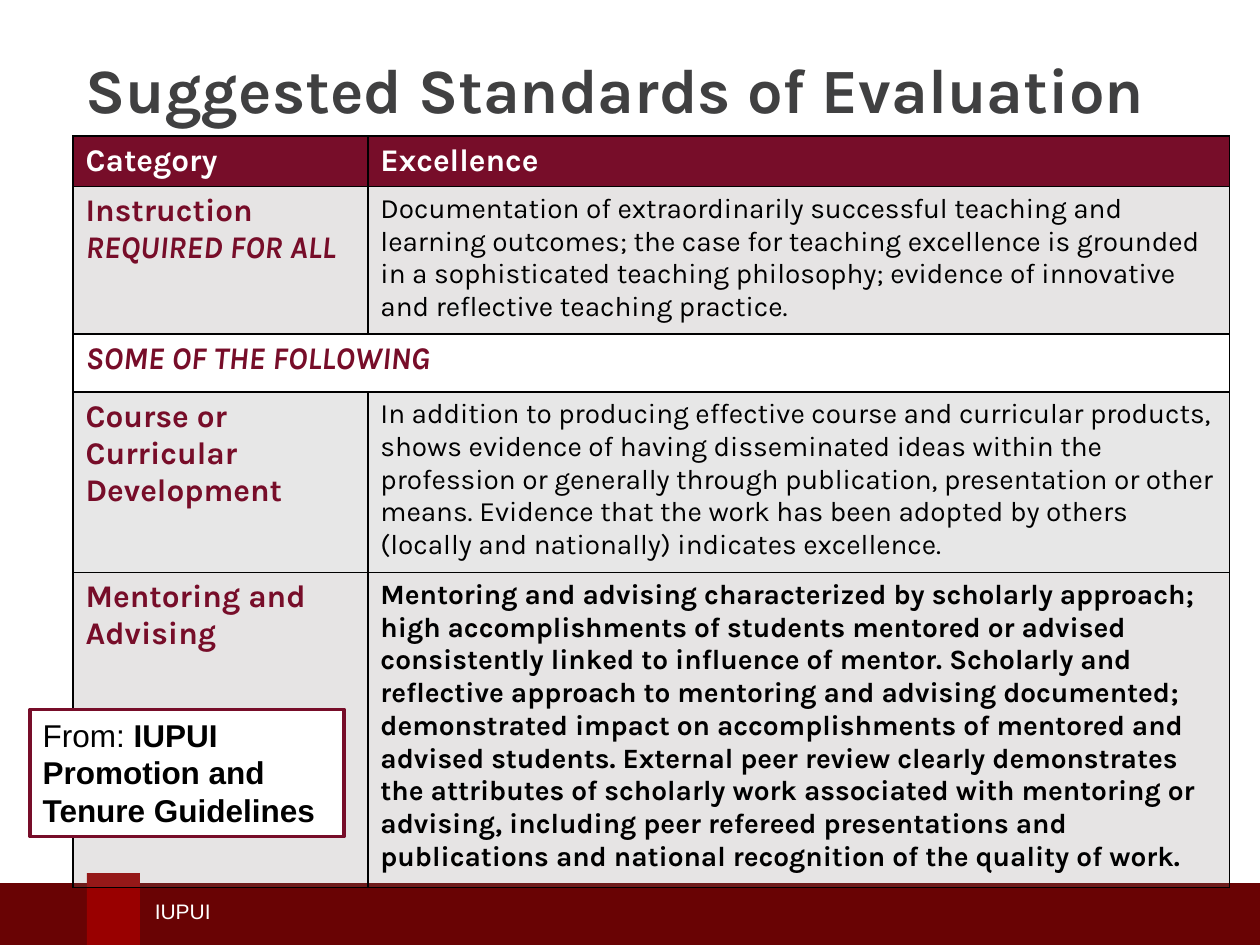
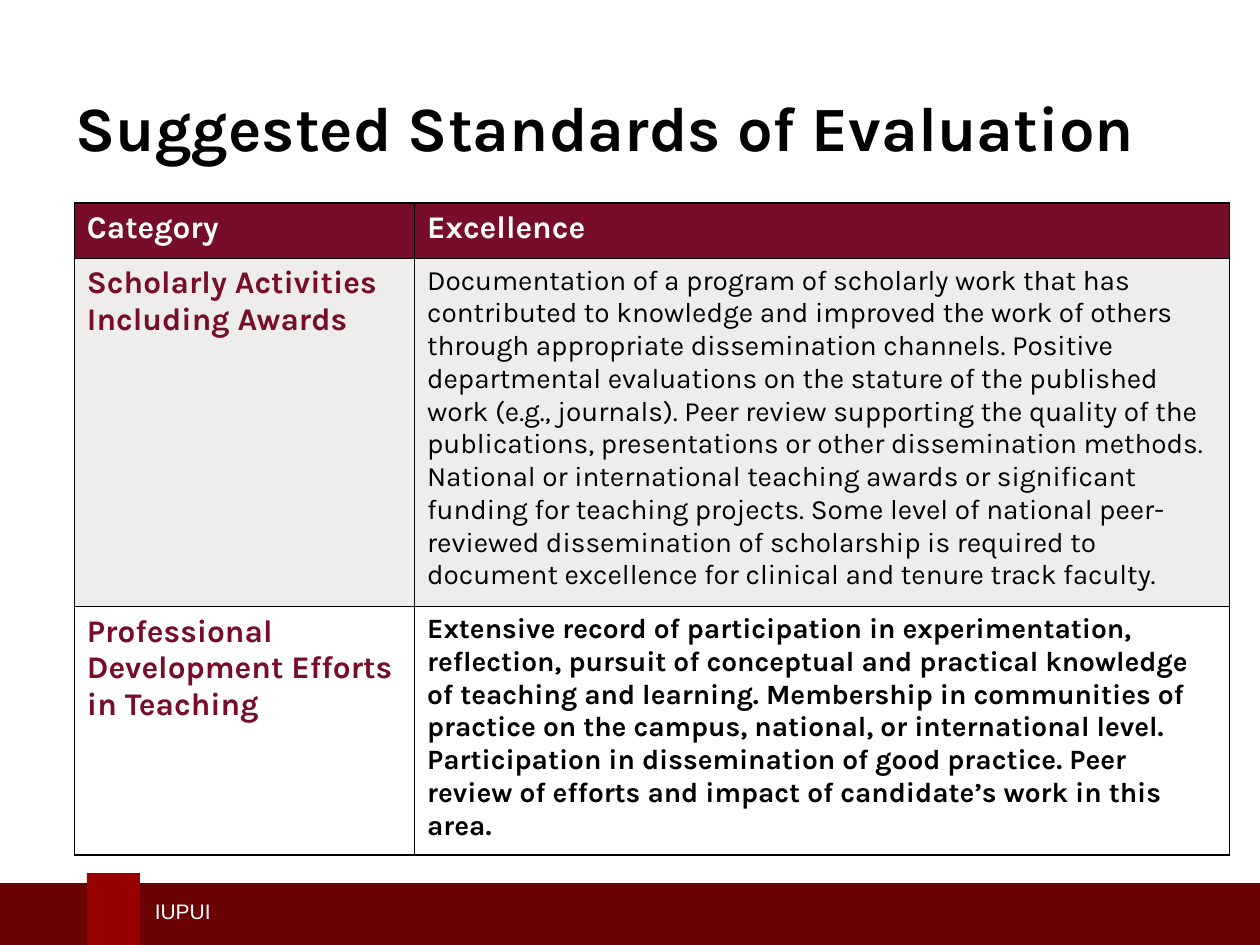
from pptx import Presentation
from pptx.dml.color import RGBColor
from pptx.enum.shapes import MSO_SHAPE
from pptx.enum.text import MSO_ANCHOR, MSO_AUTO_SIZE, PP_ALIGN
from pptx.oxml import parse_xml
from pptx.oxml.ns import nsdecls
from pptx.util import Inches, Pt

WHITE = RGBColor(0xFF, 0xFF, 0xFF)
BLACK = RGBColor(0x00, 0x00, 0x00)
CHARCOAL = RGBColor(0x40, 0x40, 0x41)
CRIMSON = RGBColor(0x77, 0x0D, 0x29)
BAND_RED = RGBColor(0x69, 0x03, 0x04)
TAB_RED = RGBColor(0x99, 0x00, 0x00)
LIGHT_GRAY = RGBColor(0xE7, 0xE7, 0xE7)
# These two tints are laid on at TINT_ALPHA
WARM_GRAY = RGBColor(0x86, 0x7C, 0x78)
PALE_GRAY = RGBColor(0xAD, 0xA7, 0xA4)
TINTS = (WARM_GRAY, PALE_GRAY)
TINT_ALPHA = 20000

HEADING_FONT = "Karla"
PLAIN_FONT = "Arial"
HEADER = ("Category", "Excellence")

# Each row: height, fill, category lines, excellence text, bold text
SLIDES = [
    dict(
        title_box=(0.58, 0.35, 9.18, 0.63), title_color=CHARCOAL,
        table_at=(0.58, 1.08), columns=(2.34, 6.84), header_height=0.4,
        rows=[
            (1.17, WARM_GRAY, ["Instruction", "REQUIRED FOR ALL"],
             "Documentation of extraordinarily successful teaching and learning "
             "outcomes; the case for teaching excellence is grounded in a "
             "sophisticated teaching philosophy; evidence of innovative and "
             "reflective teaching practice.", False),
            (0.46, WHITE, ["SOME OF THE FOLLOWING"], None, False),
            (1.43, LIGHT_GRAY, ["Course or Curricular", "Development"],
             "In addition to producing effective course and curricular products, "
             "shows evidence of having disseminated ideas within the profession "
             "or generally through publication, presentation or other means. "
             "Evidence that the work has been adopted by others (locally and "
             "nationally) indicates excellence.", False),
            (2.5, WARM_GRAY, ["Mentoring and Advising"],
             "Mentoring and advising characterized by scholarly approach; high "
             "accomplishments of students mentored or advised consistently "
             "linked to influence of mentor. Scholarly and reflective approach "
             "to mentoring and advising documented; demonstrated impact on "
             "accomplishments of mentored and advised students. External peer "
             "review clearly demonstrates the attributes of scholarly work "
             "associated with mentoring or advising, including peer refereed "
             "presentations and publications and national recognition of the "
             "quality of work.", True),
        ],
    ),
    dict(
        title_box=(0.5, 0.65, 10.13, 0.7), title_color=BLACK,
        table_at=(0.59, 1.61), columns=(2.7, 6.47), header_height=0.44,
        rows=[
            (2.76, PALE_GRAY, ["Scholarly Activities", "Including Awards"],
             "Documentation of a program of scholarly work that has contributed "
             "to knowledge and improved the work of others through appropriate "
             "dissemination channels. Positive departmental evaluations on the "
             "stature of the published work (e.g., journals). Peer review "
             "supporting the quality of the publications, presentations or "
             "other dissemination methods. National or international teaching "
             "awards or significant funding for teaching projects. Some level "
             "of national peer-reviewed dissemination of scholarship is "
             "required to document excellence for clinical and tenure track "
             "faculty.", False),
            (1.97, WHITE, ["Professional Development Efforts in Teaching"],
             "Extensive record of participation in experimentation, reflection, "
             "pursuit of conceptual and practical knowledge of teaching and "
             "learning. Membership in communities of practice on the campus, "
             "national, or international level. Participation in dissemination "
             "of good practice. Peer review of efforts and impact of "
             "candidate’s work in this area.", True),
        ],
    ),
]


def write(paragraph, text, size=18, color=BLACK, font=HEADING_FONT,
          bold=False, italic=False):
    paragraph.alignment = PP_ALIGN.LEFT
    run = paragraph.add_run()
    run.text = text
    run.font.name = font
    run.font.size = Pt(size)
    run.font.color.rgb = color
    run.font.bold = bold
    run.font.italic = italic


def paint_cell(cell, color):
    """Give a cell thin black borders and a solid or tinted fill."""
    properties = cell._tc.get_or_add_tcPr()
    for side in "LRTB":
        properties.append(parse_xml(
            f'<a:ln{side} w="{Pt(1)}" {nsdecls("a")}><a:solidFill>'
            f'<a:srgbClr val="{BLACK}"/></a:solidFill></a:ln{side}>'))
    cell.fill.solid()
    cell.fill.fore_color.rgb = color
    if color in TINTS:
        properties.find("{*}solidFill/{*}srgbClr").append(
            parse_xml(f'<a:alpha val="{TINT_ALPHA}" {nsdecls("a")}/>'))


prs = Presentation()
prs.slide_width, prs.slide_height = Inches(10), Inches(7.5)

for content in SLIDES:
    slide = prs.slides.add_slide(prs.slide_layouts[5])

    # Footer band with its tab and label
    for box, color in (((-0.03, 7.01, 10.09, 0.5), BAND_RED),
                       ((0.69, 6.93, 0.42, 0.58), TAB_RED)):
        band = slide.shapes.add_shape(MSO_SHAPE.RECTANGLE, *map(Inches, box))
        band.shadow.inherit = False
        band.fill.solid()
        band.fill.fore_color.rgb = color
        band.line.fill.background()
    footer = slide.shapes.add_textbox(
        *map(Inches, (1.13, 7.08, 3.95, 0.3))).text_frame
    footer.word_wrap = True
    footer.vertical_anchor = MSO_ANCHOR.MIDDLE
    write(footer.paragraphs[0], "IUPUI", size=12, color=WHITE, font=PLAIN_FONT)

    # Title
    title = slide.shapes.title
    title.left, title.top, title.width, title.height = map(
        Inches, content["title_box"])
    title.text_frame.vertical_anchor = MSO_ANCHOR.TOP
    title.text_frame.auto_size = MSO_AUTO_SIZE.NONE
    write(title.text_frame.paragraphs[0], "Suggested Standards of Evaluation",
          size=36, color=content["title_color"], bold=True)

    # Standards table
    rows, columns = content["rows"], content["columns"]
    heights = [content["header_height"]] + [row[0] for row in rows]
    left, top = content["table_at"]
    standards = slide.shapes.add_table(
        len(heights), len(columns), Inches(left), Inches(top),
        Inches(sum(columns)), Inches(sum(heights))).table
    standards.first_row = standards.horz_banding = False
    for column, width in zip(standards.columns, columns):
        column.width = Inches(width)
    for row, height in zip(standards.rows, heights):
        row.height = Inches(height)

    for column, heading in enumerate(HEADER):
        cell = standards.cell(0, column)
        paint_cell(cell, CRIMSON)
        write(cell.text_frame.paragraphs[0], heading, color=WHITE, bold=True)

    for number, (_, fill, category, excellence, bold) in enumerate(rows, 1):
        category_cell, excellence_cell = standards.rows[number].cells
        paint_cell(category_cell, fill)
        paint_cell(excellence_cell, fill)
        for index, line in enumerate(category):
            frame = category_cell.text_frame
            paragraph = frame.add_paragraph() if index else frame.paragraphs[0]
            write(paragraph, line, color=CRIMSON, bold=True,
                  italic=line.isupper())
        if excellence:
            write(excellence_cell.text_frame.paragraphs[0], excellence,
                  size=16, bold=bold)
        else:
            category_cell.merge(excellence_cell)

# Source note on the first slide
note = prs.slides[0].shapes.add_shape(
    MSO_SHAPE.RECTANGLE, *map(Inches, (0.24, 5.63, 2.49, 1.01)))
note.shadow.inherit = False
note.fill.solid()
note.fill.fore_color.rgb = WHITE
note.line.color.rgb = CRIMSON
note.line.width = Pt(2)
note.text_frame.word_wrap = True
note.text_frame.vertical_anchor = MSO_ANCHOR.TOP
source = note.text_frame.paragraphs[0]
write(source, "From: ", font=PLAIN_FONT)
write(source, "IUPUI Promotion and Tenure Guidelines", font=PLAIN_FONT, bold=True)

prs.save("out.pptx")
